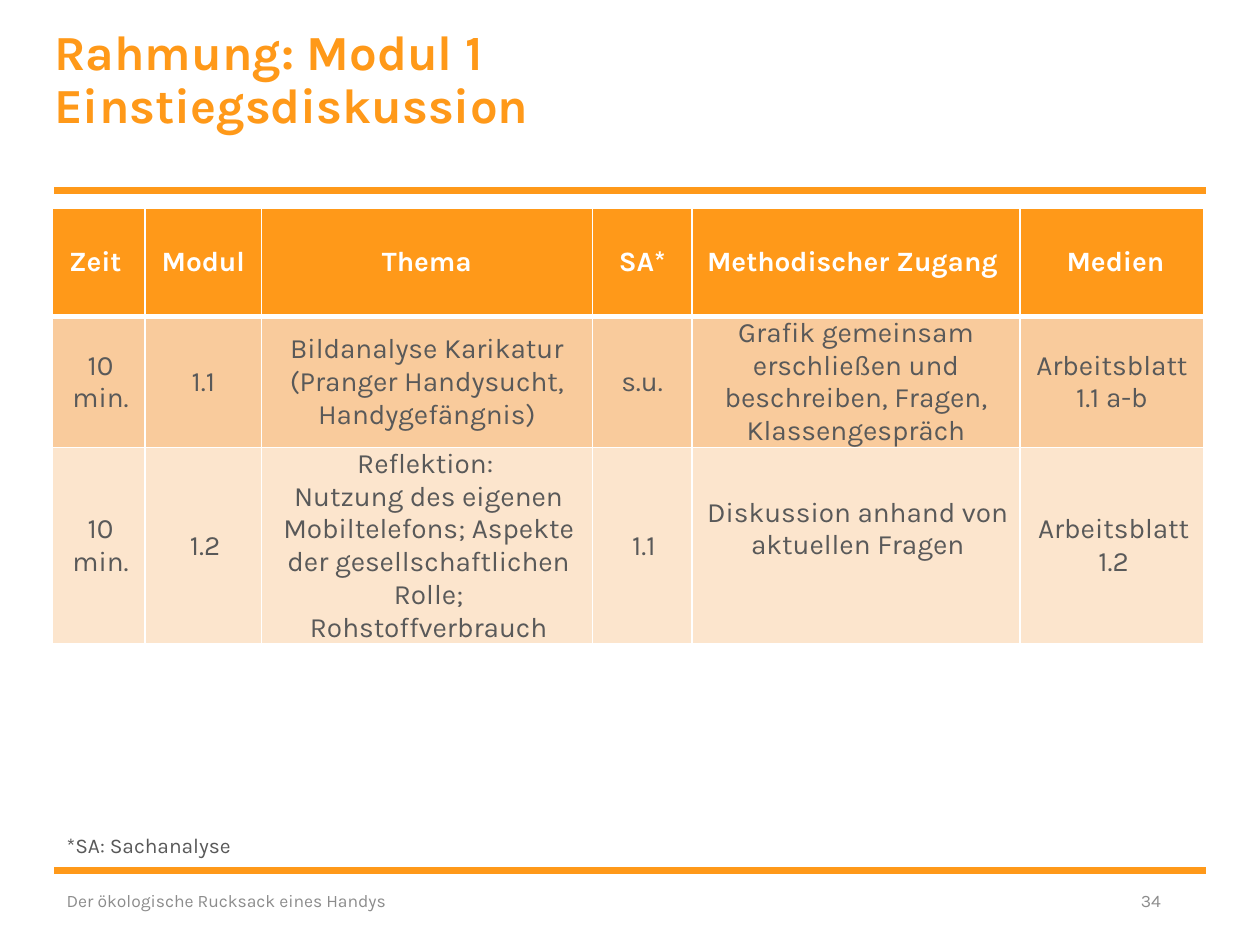
from lxml.etree import SubElement
from pptx import Presentation
from pptx.dml.color import RGBColor
from pptx.enum.shapes import MSO_CONNECTOR
from pptx.enum.text import MSO_ANCHOR, MSO_AUTO_SIZE, PP_ALIGN
from pptx.oxml.ns import qn
from pptx.util import Pt

THEME = {
    "font": "Karla",
    "orange": "FF9919", "row_fills": ["FF9919", "F9CB9C", "FCE5CD"],
    "white": "FFFFFF", "text": "595959", "muted": "8C8C8C",
    "title": 28, "table": 16, "note": 12, "footer": 10,
}


def format_text(paragraph, size, color, bold=False, **layout):
    values = {"name": THEME["font"], "size": Pt(THEME[size]), "bold": bold}
    for key, value in layout.items():
        setattr(paragraph, key, value)
    for key, value in values.items():
        setattr(paragraph.font, key, value)
    paragraph.font.color.rgb = RGBColor.from_string(THEME[color])


def add_border(cell, side, width):
    line = SubElement(cell._tc.get_or_add_tcPr(), qn(f"a:ln{side}"), w=str(Pt(width)))
    SubElement(SubElement(line, qn("a:solidFill")), qn("a:srgbClr"), val=THEME["white"])


prs = Presentation()
prs.slide_width, prs.slide_height = Pt(720), Pt(540)
slide = prs.slides.add_slide(prs.slide_layouts[5])

# Rules above and below the content
for y in (108.7, 497.5):
    rule = slide.shapes.add_connector(MSO_CONNECTOR.STRAIGHT, Pt(31), Pt(y), Pt(689), Pt(y))
    rule.line.color.rgb = RGBColor.from_string(THEME["orange"])
    rule.line.width = Pt(4)
    SubElement(rule._element.spPr, qn("a:effectLst"))

# Title
title = slide.shapes.title
title.left, title.top, title.width, title.height = Pt(31), Pt(16), Pt(482), Pt(84)
title_format = {
    "margin_left": 0, "margin_top": 0, "margin_right": 0, "margin_bottom": 0,
    "vertical_anchor": MSO_ANCHOR.TOP, "word_wrap": True,
    "auto_size": MSO_AUTO_SIZE.NONE,
}
for key, value in title_format.items():
    setattr(title.text_frame, key, value)
title.text_frame.text = "Rahmung: Modul 1\vEinstiegsdiskussion"
format_text(title.text_frame.paragraphs[0], "title", "orange", True,
            alignment=PP_ALIGN.LEFT, line_spacing=0.9)

# Schedule
schedule_rows = [
    ["Zeit ", "Modul", "Thema", "SA*", "Methodischer Zugang ", " Medien"],
    ["10 min.", "1.1", "Bildanalyse Karikatur (Pranger Handysucht, Handygefängnis)",
     "s.u.", "Grafik gemeinsam erschließen und beschreiben, Fragen, Klassengespräch",
     "Arbeitsblatt 1.1 a-b"],
    ["10 min.", "1.2",
     "Reflektion: \nNutzung des eigenen Mobiltelefons; Aspekte der gesellschaftlichen "
     "Rolle; Rohstoffverbrauch",
     "1.1", "Diskussion anhand von aktuellen Fragen", "Arbeitsblatt 1.2"],
]
column_widths = [53, 66.5, 189, 57, 187.5, 105]
row_heights = [62, 49, 62]
schedule = slide.shapes.add_table(
    len(row_heights), len(column_widths), Pt(30), Pt(119),
    Pt(sum(column_widths)), Pt(sum(row_heights))).table
schedule.first_row = schedule.horz_banding = False
for column, width in zip(schedule.columns, column_widths):
    column.width = Pt(width)
for row, height in zip(schedule.rows, row_heights):
    row.height = Pt(height)

cell_format = {
    "margin_left": Pt(5), "margin_right": Pt(5), "margin_top": 0, "margin_bottom": 0,
    "vertical_anchor": MSO_ANCHOR.MIDDLE,
}
for r, texts in enumerate(schedule_rows):
    header = r == 0
    for c, text in enumerate(texts):
        cell = schedule.cell(r, c)
        cell.text = text
        for key, value in cell_format.items():
            setattr(cell, key, value)
        borders = {"L": 1, "R": 1, "T": 3 if r == 1 else 1, "B": 3 if header else 1}
        for side, width in borders.items():
            add_border(cell, side, width)
        cell.fill.solid()
        cell.fill.fore_color.rgb = RGBColor.from_string(THEME["row_fills"][r])
        spacing = {"space_before": Pt(0), "space_after": Pt(3 if header else 0)}
        for paragraph in cell.text_frame.paragraphs:
            if r == 2 or (r == 1 and c == 0):
                paragraph._p.get_or_add_pPr().set("marL", str(Pt(2)))
            format_text(paragraph, "table", "white" if header else "text", header,
                        alignment=PP_ALIGN.CENTER, **spacing)
# The discussion entry sits one line higher than its neighbours
schedule.cell(2, 4).margin_bottom = Pt(19)

# Footnote and footer
small_texts = [
    ("*SA: Sachanalyse", 31, 472.3, 198, 21.6, "note", "text",
     PP_ALIGN.LEFT, MSO_ANCHOR.TOP),
    ("Der ökologische Rucksack eines Handys", 31, 500.4, 243, 28.8, "footer", "muted",
     PP_ALIGN.LEFT, MSO_ANCHOR.MIDDLE),
    ("34", 541.4, 500.4, 129, 28.8, "footer", "muted",
     PP_ALIGN.RIGHT, MSO_ANCHOR.MIDDLE),
]
for text, x, y, width, height, size, color, alignment, anchor in small_texts:
    frame = slide.shapes.add_textbox(Pt(x), Pt(y), Pt(width), Pt(height)).text_frame
    frame.word_wrap = True
    frame.vertical_anchor = anchor
    frame.text = text
    format_text(frame.paragraphs[0], size, color, alignment=alignment)

prs.save("out.pptx")
